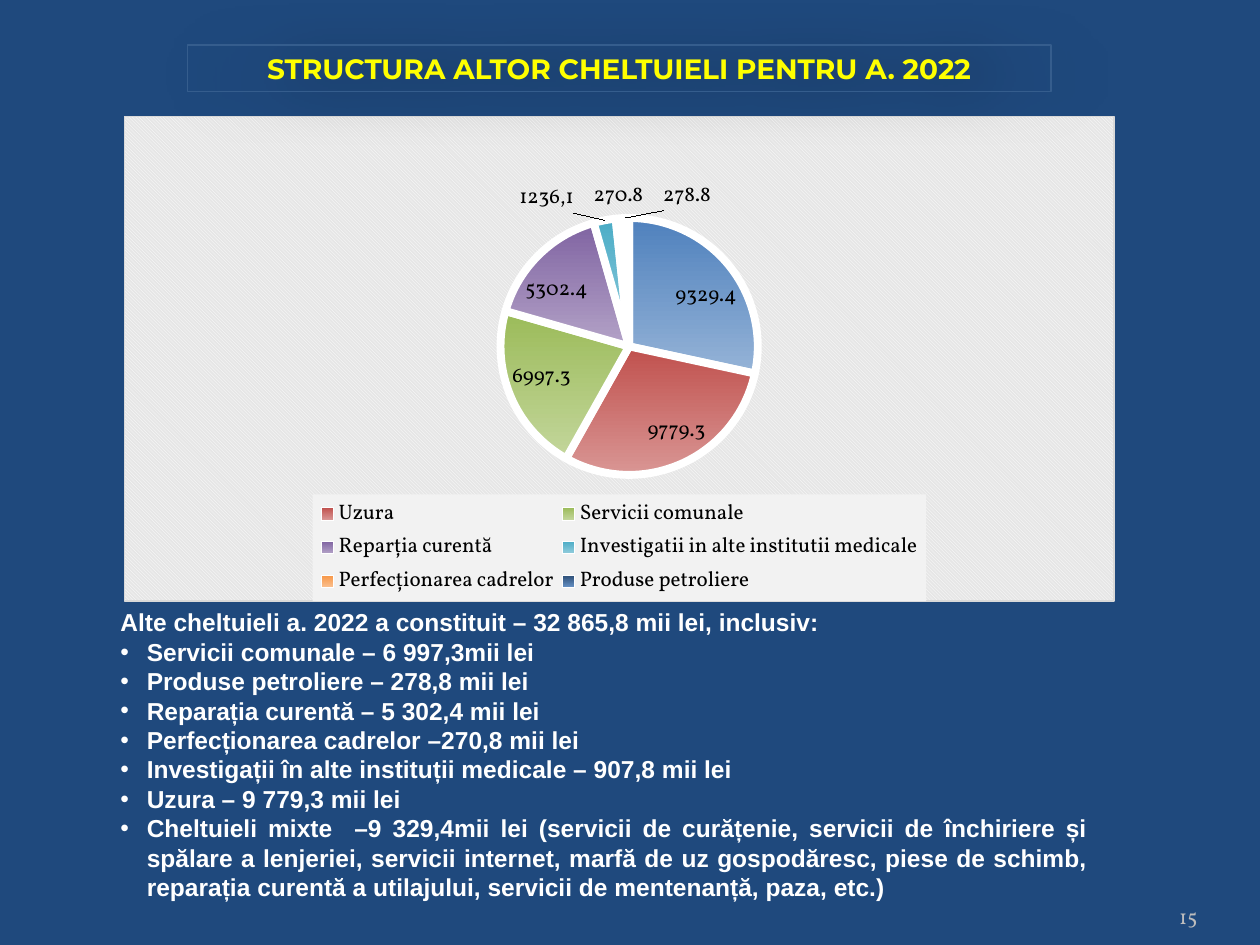
from lxml import etree
from pptx import Presentation
from pptx import util as u
from pptx.chart.data import CategoryChartData
from pptx.dml.color import RGBColor
from pptx.enum import chart as ch, shapes, text
from pptx.oxml import parse_xml
from pptx.oxml.ns import qn

NAVY = RGBColor(0x1F, 0x49, 0x7D)
YELLOW = RGBColor(0xFF, 0xFF, 0x00)
WHITE = RGBColor(0xFF, 0xFF, 0xFF)
BLACK = RGBColor(0, 0, 0)
GREY = RGBColor(0xBD, 0xBD, 0xBD)
OUTLINE = RGBColor(0x35, 0x5D, 0x8D)
NS = ('xmlns:a="http://schemas.openxmlformats.org/drawingml/2006/main" '
      'xmlns:c="http://schemas.openxmlformats.org/drawingml/2006/chart"')

EXPENSES = [  # category, value, gradient start, gradient end
    ("Cheltuieli mixte", 9329.4, "4F81BD", "95B3D7"),
    ("Uzura", 9779.3, "C0504D", "D99694"),
    ("Servicii comunale", 6997.3, "9BBB59", "C3D69B"),
    ("Reparția curentă", 5302.4, "8064A2", "B3A2C7"),
    ("Investigatii in alte institutii medicale", 907.8, "4BACC6", "93CDDD"),
    ("Perfecționarea cadrelor", 270.8, "F79646", "FAC090"),
    ("Produse petroliere", 278.8, "2C4D75", "6792C6"),
]
INVESTIGATIONS = 4
SUMMARY = "Alte cheltuieli a. 2022 a constituit – 32 865,8 mii lei, inclusiv:"
DETAILS = [
    "Servicii comunale – 6 997,3mii lei",
    "Produse petroliere – 278,8 mii lei",
    "Reparația curentă – 5 302,4 mii lei",
    "Perfecționarea cadrelor –270,8 mii lei",
    "Investigații în alte instituții medicale – 907,8 mii lei",
    "Uzura – 9 779,3 mii lei",
    "Cheltuieli mixte  –9 329,4mii lei (servicii de curățenie, servicii de "
    "închiriere și spălare a lenjeriei, servicii internet, marfă de uz "
    "gospodăresc, piese de schimb, reparația curentă a utilajului, servicii "
    "de mentenanță, paza, etc.)",
]


def set_font(font, name, size, color, bold=False):
    font.name, font.size, font.bold = name, u.Pt(size), bold
    font.color.rgb = color


def write(paragraph, words, align=text.PP_ALIGN.LEFT, bullet=False, **style):
    paragraph.alignment = align
    run = paragraph.add_run()
    run.text = words
    set_font(run.font, **style)
    if bullet:
        props = paragraph._p.get_or_add_pPr()
        indent = u.Cm(0.53)
        props.set("marL", str(indent))
        props.set("indent", str(-indent))
        etree.SubElement(props, qn("a:buFont")).set("typeface", "Arial")
        etree.SubElement(props, qn("a:buChar")).set("char", "•")


def manual_layout(x, y, w, h, inner=False):
    target = '<c:layoutTarget val="inner"/>' if inner else ""
    sizes = "".join(f'<c:{tag} val="{value}"/>'
                    for tag, value in zip("xywh", (x, y, w, h)))
    return parse_xml(
        f'<c:layout {NS}><c:manualLayout>{target}<c:xMode val="edge"/>'
        f'<c:yMode val="edge"/>{sizes}</c:manualLayout></c:layout>')


class Report:
    """Holds the slide and its fonts."""
    serif, sans, heading = "Vollkorn", "Arial", "Montserrat"

    def __init__(self, slide):
        self.slide = slide
        slide.background.fill.solid()
        slide.background.fill.fore_color.rgb = NAVY

    def title(self, words, *box):
        banner = self.slide.shapes.add_shape(
            shapes.MSO_SHAPE.RECTANGLE, *map(u.Cm, box))
        banner.fill.background()
        banner.line.color.rgb = OUTLINE
        banner.line.width = u.Pt(0.75)
        banner.shadow.inherit = False
        effects = banner._element.spPr.find(qn("a:effectLst"))
        effects.append(parse_xml(
            f'<a:outerShdw {NS} blurRad="{u.Pt(35)}" dist="{u.Pt(10.2)}" dir="480000" '
            'rotWithShape="0"><a:srgbClr val="000000"><a:alpha val="45000"/>'
            '</a:srgbClr></a:outerShdw>'))
        banner.text_frame.word_wrap = True
        write(banner.text_frame.paragraphs[0], words, text.PP_ALIGN.CENTER,
              name=self.heading, size=16, color=YELLOW, bold=True)

    def text_box(self, *box):
        frame = self.slide.shapes.add_textbox(*map(u.Cm, box)).text_frame
        frame.word_wrap = True
        return frame

    def breakdown(self, summary, details, *box):
        frame = self.text_box(*box)
        style = dict(align=text.PP_ALIGN.JUSTIFY, name=self.sans, size=14,
                     color=WHITE, bold=True)
        write(frame.paragraphs[0], summary, **style)
        for detail in details:
            write(frame.add_paragraph(), detail, bullet=True, **style)

    def page_number(self, number, *box):
        frame = self.text_box(*box)
        frame.margin_left = frame.margin_right = 0
        frame.vertical_anchor = text.MSO_ANCHOR.BOTTOM
        write(frame.paragraphs[0], number, text.PP_ALIGN.RIGHT,
              name=self.serif, size=12, color=GREY)

    def pie(self, rows, *box):
        data = CategoryChartData(number_format="General")
        data.categories = [row[0] for row in rows]
        data.add_series("Series 1", [row[1] for row in rows])
        chart = self.slide.shapes.add_chart(
            ch.XL_CHART_TYPE.PIE, *map(u.Cm, box), data).chart
        chart.has_title = False
        set_font(chart.font, self.serif, 10, BLACK)
        self.pie_frame(chart)
        self.pie_slices(chart.plots[0], rows)
        self.pie_legend(chart)

    def pie_frame(self, chart):
        body = chart._chartSpace.find(qn("c:chart"))
        body.addnext(parse_xml(
            f'<c:spPr {NS}><a:pattFill prst="dkDnDiag">'
            '<a:fgClr><a:srgbClr val="FFFFFF"/></a:fgClr>'
            '<a:bgClr><a:srgbClr val="E6E6E6"/></a:bgClr></a:pattFill>'
            f'<a:ln w="{u.Pt(0.75)}"><a:solidFill><a:srgbClr val="D9D9D9"/>'
            '</a:solidFill></a:ln></c:spPr>'))
        area = body.find(qn("c:plotArea"))
        for automatic in area.findall(qn("c:layout")):
            area.remove(automatic)
        area.insert(0, manual_layout(0.09, 0.21, 0.84, 0.53, inner=True))

    def pie_slices(self, plot, rows):
        plot.vary_by_categories = True
        series = plot.series[0]
        for index, (_, _, *colors) in enumerate(rows):
            look = series.points[index].format
            look.fill.gradient()
            look.fill.gradient_angle = 270
            for stop, color in zip(look.fill.gradient_stops, colors):
                stop.color.rgb = RGBColor.from_string(color)
            look.line.color.rgb = WHITE
            look.line.width = u.Pt(4.5)
        labels = series.data_labels
        labels.show_value = True
        labels.position = ch.XL_LABEL_POSITION.BEST_FIT
        set_font(labels.font, self.serif, 12, BLACK)
        special = series.points[INVESTIGATIONS].data_label
        write(special.text_frame.paragraphs[0], "1236,1", text.PP_ALIGN.CENTER,
              name=self.serif, size=12, color=BLACK)
        special.position = ch.XL_LABEL_POSITION.BEST_FIT

    def pie_legend(self, chart):
        chart.has_legend = True
        legend = chart.legend
        legend.position = ch.XL_LEGEND_POSITION.BOTTOM
        legend.include_in_layout = False
        set_font(legend.font, self.serif, 12, BLACK)
        element = legend._element
        for automatic in element.findall(qn("c:layout")):
            element.remove(automatic)
        place = element.find(qn("c:legendPos"))
        place.addnext(manual_layout(0.19, 0.78, 0.62, 0.22))
        place.addnext(parse_xml(
            f'<c:legendEntry {NS}><c:idx val="0"/><c:delete val="1"/></c:legendEntry>'))
        element.find(qn("c:overlay")).addnext(parse_xml(
            f'<c:spPr {NS}><a:solidFill><a:srgbClr val="F2F2F2"/></a:solidFill>'
            '<a:ln><a:noFill/></a:ln></c:spPr>'))


def main():
    deck = Presentation()
    deck.slide_width, deck.slide_height = u.Cm(25.4), u.Cm(19.05)
    report = Report(deck.slides.add_slide(deck.slide_layouts[6]))
    report.pie(EXPENSES, 2.5, 2.33, 19.97, 9.8)
    report.page_number("15", 22.02, 17.83, 2.12, 1.01)
    report.title("STRUCTURA ALTOR CHELTUIELI PENTRU A. 2022",
                 3.78, 0.91, 17.41, 0.94)
    report.breakdown(SUMMARY, DETAILS, 2.18, 12.12, 20, 6.26)
    deck.save("out.pptx")


if __name__ == "__main__":
    main()
